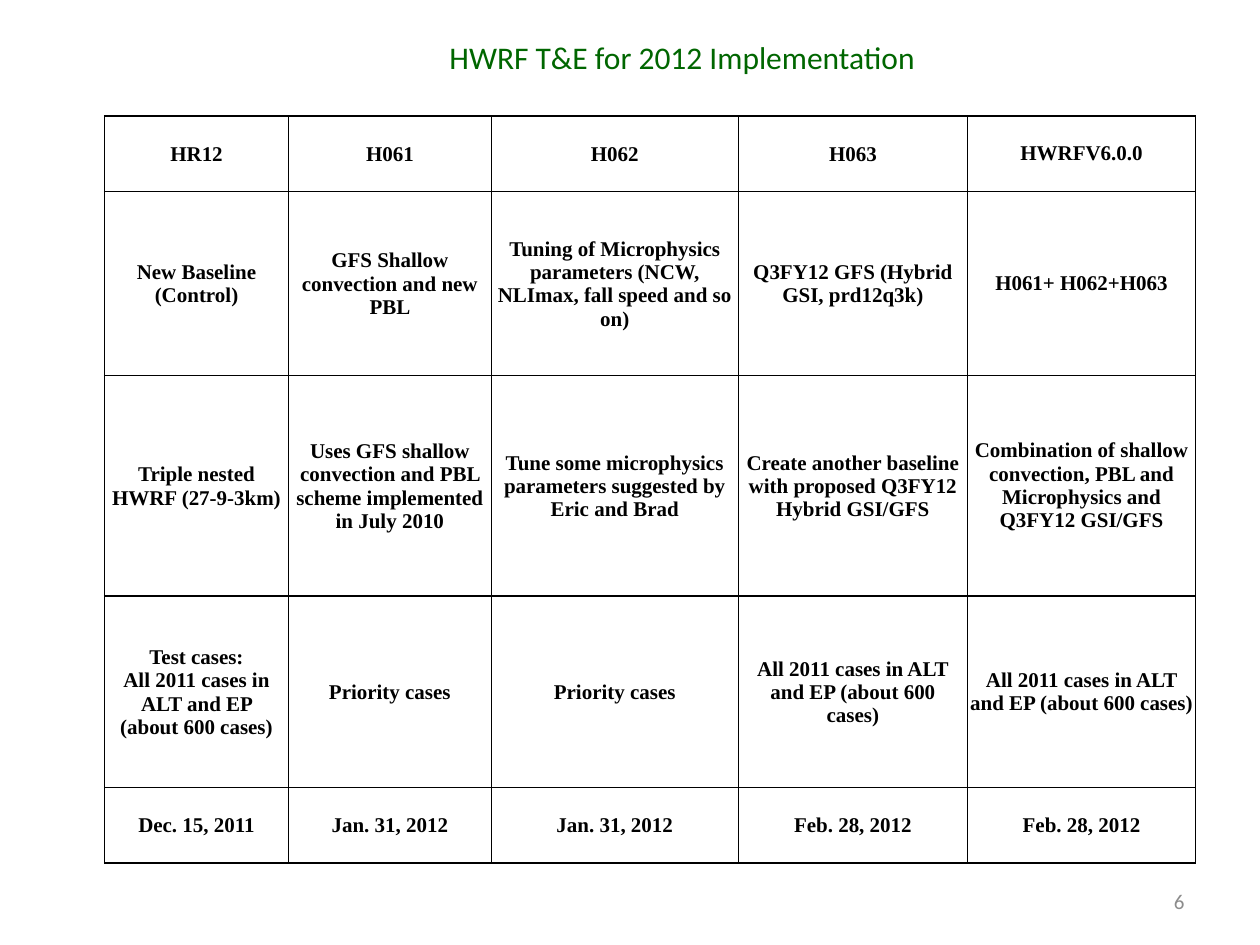
"""Build the HWRF 2012 test and evaluation schedule slide."""
from lxml.etree import SubElement
from pptx import Presentation
from pptx.dml.color import RGBColor
from pptx.enum.text import MSO_ANCHOR as ANCHOR, PP_ALIGN as ALIGN
from pptx.oxml.ns import qn
from pptx.util import Inches, Pt

BLACK = RGBColor(0x00, 0x00, 0x00)
GREEN = RGBColor(0x00, 0x66, 0x00)
GRAY = RGBColor(0x8C, 0x8C, 0x8C)

TITLE = "HWRF T&E for 2012 Implementation"
PAGE = "6"
ALL_CASES = "All 2011 cases in ALT and EP (about 600 cases)"
ROWS = [
    ["HR12", "H061", "H062", "H063", "HWRFV6.0.0"],
    ["New Baseline (Control)",
     "GFS Shallow convection and new PBL",
     "Tuning of Microphysics parameters (NCW, NLImax, fall speed and so on)",
     "Q3FY12 GFS (Hybrid GSI, prd12q3k)",
     "H061+ H062+H063"],
    ["Triple nested HWRF (27-9-3km)",
     "Uses GFS shallow convection and PBL scheme implemented in July 2010",
     "Tune some microphysics parameters suggested by Eric and Brad",
     "Create another baseline with proposed Q3FY12 Hybrid GSI/GFS",
     "Combination of shallow convection, PBL and Microphysics and Q3FY12 GSI/GFS"],
    ["Test cases:\n" + ALL_CASES, "Priority cases", "Priority cases", ALL_CASES, ALL_CASES],
    ["Dec. 15, 2011", "Jan. 31, 2012", "Jan. 31, 2012", "Feb. 28, 2012", "Feb. 28, 2012"],
]
COL_WIDTHS = [1.46, 1.61, 1.96, 1.82, 1.81]
ROW_HEIGHTS = [0.6, 1.46, 1.75, 1.52, 0.6]


def style_text(tf, font, size, color, align, bold=False):
    for p in tf.paragraphs:
        p.alignment = align
        p.font.name, p.font.size, p.font.bold = font, Pt(size), bold
        p.font.color.rgb = color


def add_label(s, box, text, size, color, align, anchor):
    tf = s.shapes.add_textbox(*map(Inches, box)).text_frame
    tf.word_wrap = True
    tf.vertical_anchor = anchor
    tf.text = text
    style_text(tf, "Calibri", size, color, align)


def add_borders(cell):
    tc_pr = cell._tc.get_or_add_tcPr()
    for i, side in enumerate(("lnL", "lnR", "lnT", "lnB")):
        ln = SubElement(tc_pr, qn(f"a:{side}"), w=str(Pt(1)))
        fill = SubElement(ln, qn("a:solidFill"))
        SubElement(fill, qn("a:srgbClr"), val=str(BLACK))
        tc_pr.insert(i, ln)


def fill_cell(cell, text, insets):
    cell.text = text
    cell.vertical_anchor = ANCHOR.MIDDLE
    cell.margin_left, cell.margin_top, cell.margin_right, cell.margin_bottom = map(Inches, insets)
    cell.fill.background()
    add_borders(cell)
    style_text(cell.text_frame, "Times New Roman", 12, BLACK, ALIGN.CENTER, True)


def add_schedule(s):
    size = sum(COL_WIDTHS), sum(ROW_HEIGHTS)
    table = s.shapes.add_table(len(ROWS), len(COL_WIDTHS),
                               *map(Inches, (0.83, 0.92, *size))).table
    table.first_row = table.horz_banding = False
    for col, width in zip(table.columns, COL_WIDTHS):
        col.width = Inches(width)
    for r, (row, height) in enumerate(zip(ROWS, ROW_HEIGHTS)):
        table.rows[r].height = Inches(height)
        for c, text in enumerate(row):
            is_last = c == len(row) - 1
            fill_cell(table.cell(r, c), text, (0, 0, 0, 0) if is_last else (0.05, 0.01, 0.05, 0))


def main():
    prs = Presentation()
    prs.slide_width, prs.slide_height = Inches(10), Inches(7.5)
    s = prs.slides.add_slide(prs.slide_layouts[6])
    add_label(s, (7.17, 6.95, 2.33, 0.4), PAGE, 12, GRAY, ALIGN.RIGHT, ANCHOR.MIDDLE)
    add_schedule(s)
    add_label(s, (2.75, 0.25, 5.33, 0.42), TITLE, 18, GREEN, ALIGN.CENTER, ANCHOR.TOP)
    prs.save("out.pptx")


if __name__ == "__main__":
    main()
